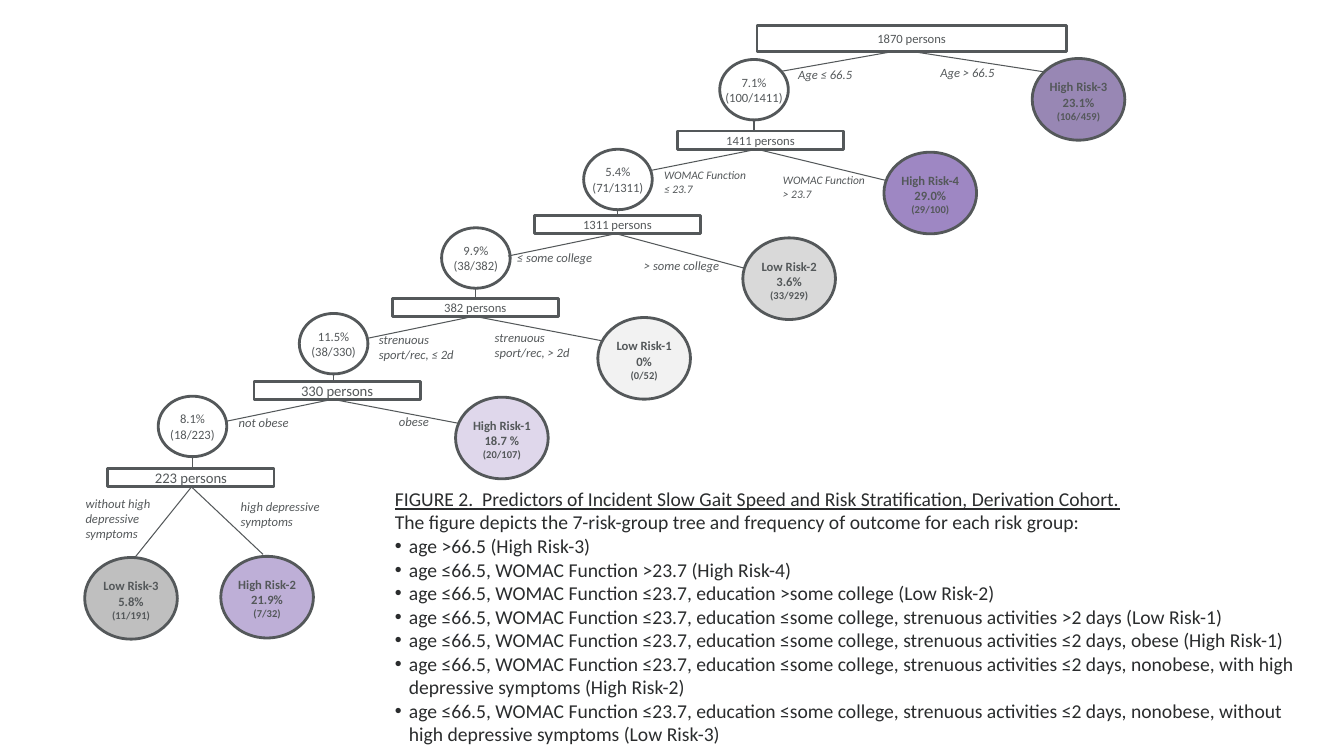
import pptx
import pptx.dml.color
import pptx.enum.shapes
import pptx.enum.text
import pptx.util
from lxml import etree
from pptx.oxml.ns import qn

Pt = pptx.util.Pt
RGBColor = pptx.dml.color.RGBColor
Shape = pptx.enum.shapes.MSO_SHAPE
Align = pptx.enum.text.PP_ALIGN
Anchor = pptx.enum.text.MSO_ANCHOR

GREY = RGBColor(0x54, 0x58, 0x5A)
INK = RGBColor(0x2A, 0x2C, 0x2D)
WHITE = RGBColor(0xFF, 0xFF, 0xFF)
FONT = "Calibri"

# Content: boxes as text, left, top, width, height, text size
BOXES = [
    ("1870 persons", 540.7, 18, 221, 18.7, 9),
    ("1411 persons", 483.8, 93.6, 118.8, 13, 9),
    ("1311 persons", 381.6, 154.1, 118.8, 13, 9),
    ("382 persons", 280.1, 213.1, 118.8, 13, 9),
    ("330 persons", 181.4, 272.2, 118.8, 13, 10.5),
    ("223 persons", 77, 334.8, 118.8, 13, 10.5),
]

# Groups that are split again: rate, count, left, top
NODES = [
    ("7.1%", "(100/1411)", 514.1, 42.5),
    ("5.4%", "(71/1311)", 416.9, 106.6),
    ("9.9%", "(38/382)", 315.4, 162.7),
    ("11.5%", "(38/330)", 213.8, 223.9),
    ("8.1%", "(18/223)", 113, 283),
]

# Final risk groups: name, rate, count, left, top, fill
RISKS = [
    ("High Risk-3", "23.1%", "(106/459)", 737.3, 41.8, RGBColor(0x98, 0x87, 0xB4)),
    ("High Risk-4", "29.0%", "(29/100)", 631.4, 108.7, RGBColor(0x9E, 0x87, 0xC3)),
    ("Low Risk-2", "3.6%", "(33/929)", 530.6, 169.9, RGBColor(0xD9, 0xD9, 0xD9)),
    ("Low Risk-1", "0%", "(0/52)", 427, 226.8, RGBColor(0xF2, 0xF2, 0xF2)),
    ("High Risk-1", "18.7 %", "(20/107)", 325.4, 283.7, RGBColor(0xDF, 0xD7, 0xEB)),
    ("High Risk-2", "21.9%", "(7/32)", 157.7, 397.4, RGBColor(0xBE, 0xAF, 0xD7)),
    ("Low Risk-3", "5.8%", "(11/191)", 60.5, 398.2, RGBColor(0xBF, 0xBF, 0xBF)),
]

# Branches under each box: start x, end x, end y
BRANCHES = [
    [(638.6, 557.3, 51.1), (650.9, 748.8, 51.8)],
    [(540.7, 465.1, 121.7), (540.7, 632.9, 128.9)],
    [(439.2, 362.9, 182.9), (440.6, 531.4, 191.5)],
    [(337.7, 261.4, 241.9), (339.8, 429.8, 243.4)],
    [(237.6, 161.3, 301), (237.6, 327.6, 302.4)],
    [(136.8, 95.8, 398.9), (136.8, 187.9, 396)],
]

# Branch conditions: paragraphs, left, top, width, height, text size
CONDITIONS = [
    (["Age ≤ 66.5"], 563, 43.9, 69.8, 20, 9),
    (["Age > 66.5"], 664.6, 42.5, 59.8, 20, 9),
    (["WOMAC Function", "≤ 23.7"], 467.3, 116.6, 133.2, 30, 8.2),
    (["WOMAC Function", "> 23.7"], 552.2, 120.2, 78.5, 41, 8.2),
    (["≤ some college"], 362.2, 175, 76.3, 20, 9),
    (["> some college"], 452.9, 180.7, 73.4, 32, 9),
    (["strenuous sport/rec, ≤ 2d"], 263.5, 233.3, 76.3, 32, 9),
    (["strenuous sport/rec, > 2d"], 346.3, 231.8, 82.8, 32, 9),
    (["not obese"], 163.4, 293, 57.6, 20, 9),
    (["obese"], 277.9, 292.3, 59, 20, 9),
    (["without high", "depressive symptoms"], 54, 350.6, 85.7, 44, 9),
    (["high depressive", "symptoms"], 164.9, 352.8, 117.4, 32, 9),
]

TITLE = ("FIGURE 2.  Predictors of Incident Slow Gait Speed and Risk "
         "Stratification, Derivation Cohort.")
INTRO = "The figure depicts the 7-risk-group tree and frequency of outcome for each risk group:"
BULLETS = [
    "age >66.5 (High Risk-3)",
    "age ≤66.5, WOMAC Function >23.7 (High Risk-4)",
    "age ≤66.5, WOMAC Function ≤23.7, education >some college (Low Risk-2)",
    "age ≤66.5, WOMAC Function ≤23.7, education ≤some college, "
    "strenuous activities >2 days (Low Risk-1)",
    "age ≤66.5, WOMAC Function ≤23.7, education ≤some college, "
    "strenuous activities ≤2 days, obese (High Risk-1)",
    "age ≤66.5, WOMAC Function ≤23.7, education ≤some college, "
    "strenuous activities ≤2 days, nonobese, with high depressive symptoms (High Risk-2)",
    "age ≤66.5, WOMAC Function ≤23.7, education ≤some college, "
    "strenuous activities ≤2 days, nonobese, without high depressive symptoms (Low Risk-3)",
]

NODE_W, NODE_H = 49, 43.2
RISK_W, RISK_H = 66.2, 58.3
BULLET_INDENT = 10

deck = pptx.Presentation()
deck.slide_width, deck.slide_height = Pt(960), Pt(540)
page = deck.slides.add_slide(deck.slide_layouts[6])


def write(frame, lines, color=GREY, align=Align.LEFT, bold=False, italic=False):
    """Fill a text frame with one paragraph per (text, size)."""
    for index, (text, size) in enumerate(lines):
        para = frame.paragraphs[0] if index == 0 else frame.add_paragraph()
        para.alignment = align
        span = para.add_run()
        span.text = text
        span.font.name, span.font.size = FONT, Pt(size)
        span.font.bold, span.font.italic = bold, italic
        span.font.color.rgb = color


def add_outline(kind, left, top, width, height, fill, lines, bold=False, drop=0):
    shape = page.shapes.add_shape(kind, Pt(left), Pt(top), Pt(width), Pt(height))
    shape.shadow.inherit = False
    if fill is None:
        shape.fill.background()
    else:
        shape.fill.solid()
        shape.fill.fore_color.rgb = fill
    shape.line.color.rgb, shape.line.width = GREY, Pt(2)
    frame = shape.text_frame
    frame.word_wrap = False
    frame.vertical_anchor = Anchor.MIDDLE
    frame.margin_left = frame.margin_right = frame.margin_bottom = 0
    frame.margin_top = Pt(drop)
    write(frame, lines, align=Align.CENTER, bold=bold)


def add_line(x1, y1, x2, y2):
    line = page.shapes.add_connector(
        pptx.enum.shapes.MSO_CONNECTOR.STRAIGHT, Pt(x1), Pt(y1), Pt(x2), Pt(y2))
    line.line.color.rgb, line.line.width = GREY, Pt(0.75)
    etree.SubElement(line._element.spPr, qn("a:effectLst"))


def add_text(left, top, width, height):
    box = page.shapes.add_textbox(Pt(left), Pt(top), Pt(width), Pt(height))
    box.text_frame.word_wrap = True
    return box.text_frame


# Lines: branches below each box, stems from each node to the next box
for (_, _, top, _, height, _), branches in zip(BOXES, BRANCHES):
    for start_x, end_x, end_y in branches:
        add_line(start_x, top + height, end_x, end_y)
for (_, _, left, top), next_box in zip(NODES, BOXES[1:]):
    center = left + NODE_W / 2
    add_line(center, top + NODE_H, center, next_box[2])

# Boxes, nodes and risk groups
for text, left, top, width, height, size in BOXES:
    add_outline(Shape.RECTANGLE, left, top, width, height, WHITE, [(text, size)])
for rate, count, left, top in NODES:
    add_outline(Shape.FLOWCHART_CONNECTOR, left, top, NODE_W, NODE_H, None,
                [(rate, 9), (count, 9)])
for name, rate, count, left, top, fill in RISKS:
    add_outline(Shape.FLOWCHART_CONNECTOR, left, top, RISK_W, RISK_H, fill,
                [(name, 9), (rate, 9), (count, 7.5)], bold=True, drop=2)

# Branch conditions
for texts, left, top, width, height, size in CONDITIONS:
    write(add_text(left, top, width, height), [(text, size) for text in texts], italic=True)

# Caption
caption = add_text(275, 344.2, 670.3, 193.7)
write(caption, [(text, 14) for text in [TITLE, INTRO, *BULLETS]], color=INK)
caption.paragraphs[0].runs[0].font.underline = True
for para in caption.paragraphs[2:]:
    props = para._p.get_or_add_pPr()
    props.set("marL", str(Pt(BULLET_INDENT)))
    props.set("indent", str(-Pt(BULLET_INDENT)))
    etree.SubElement(props, qn("a:buFont"), typeface="Arial")
    etree.SubElement(props, qn("a:buChar"), char="•")

deck.save("out.pptx")
